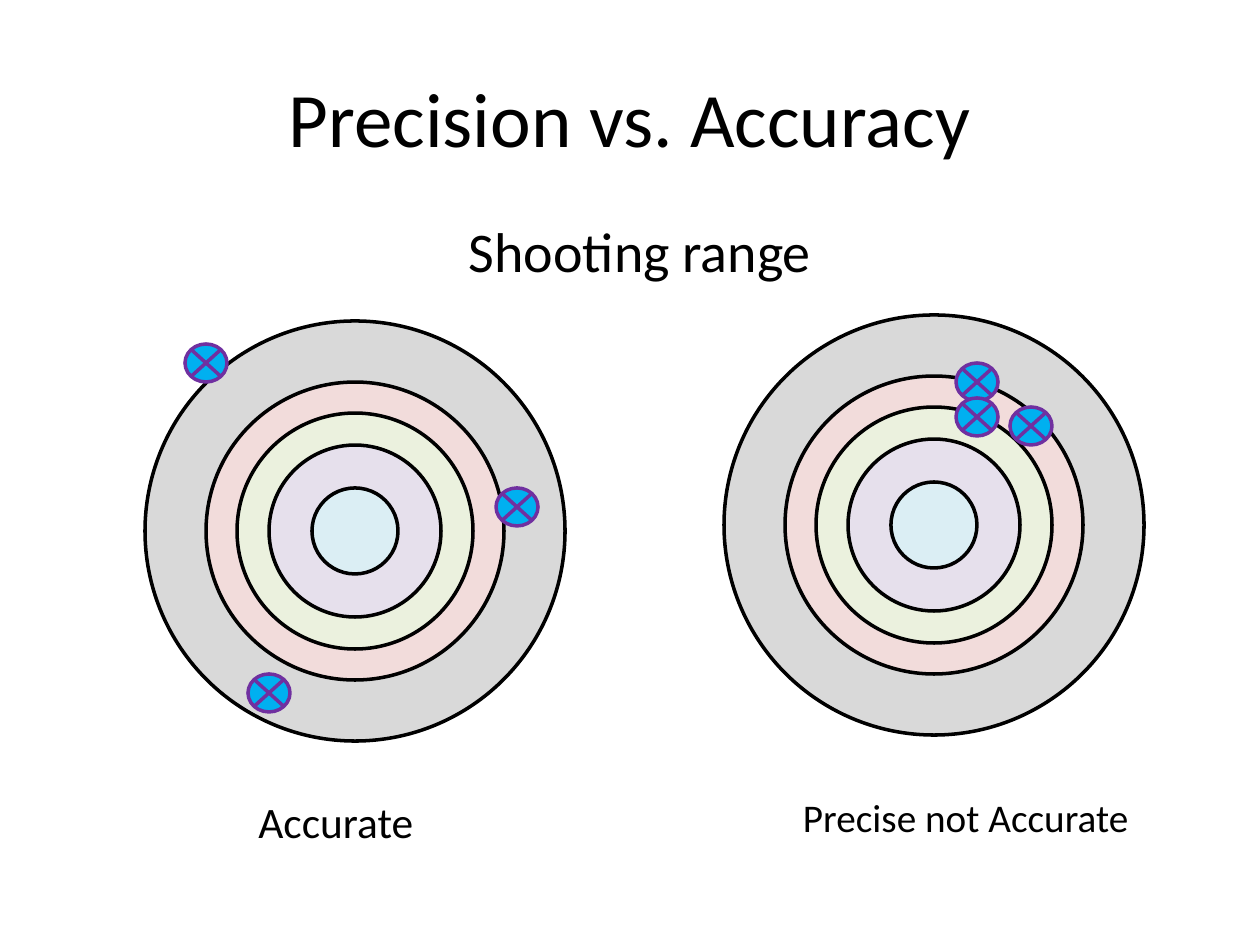
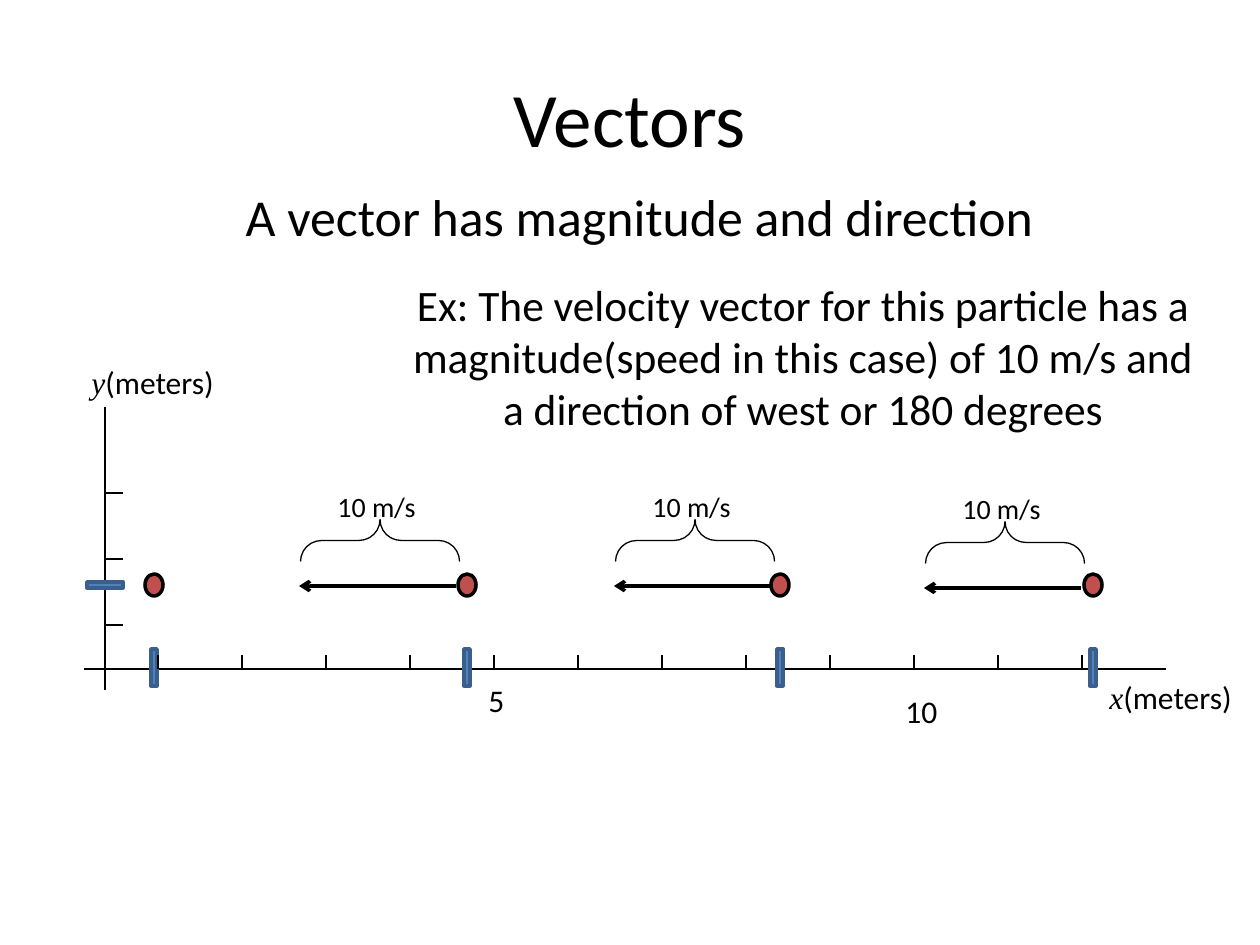
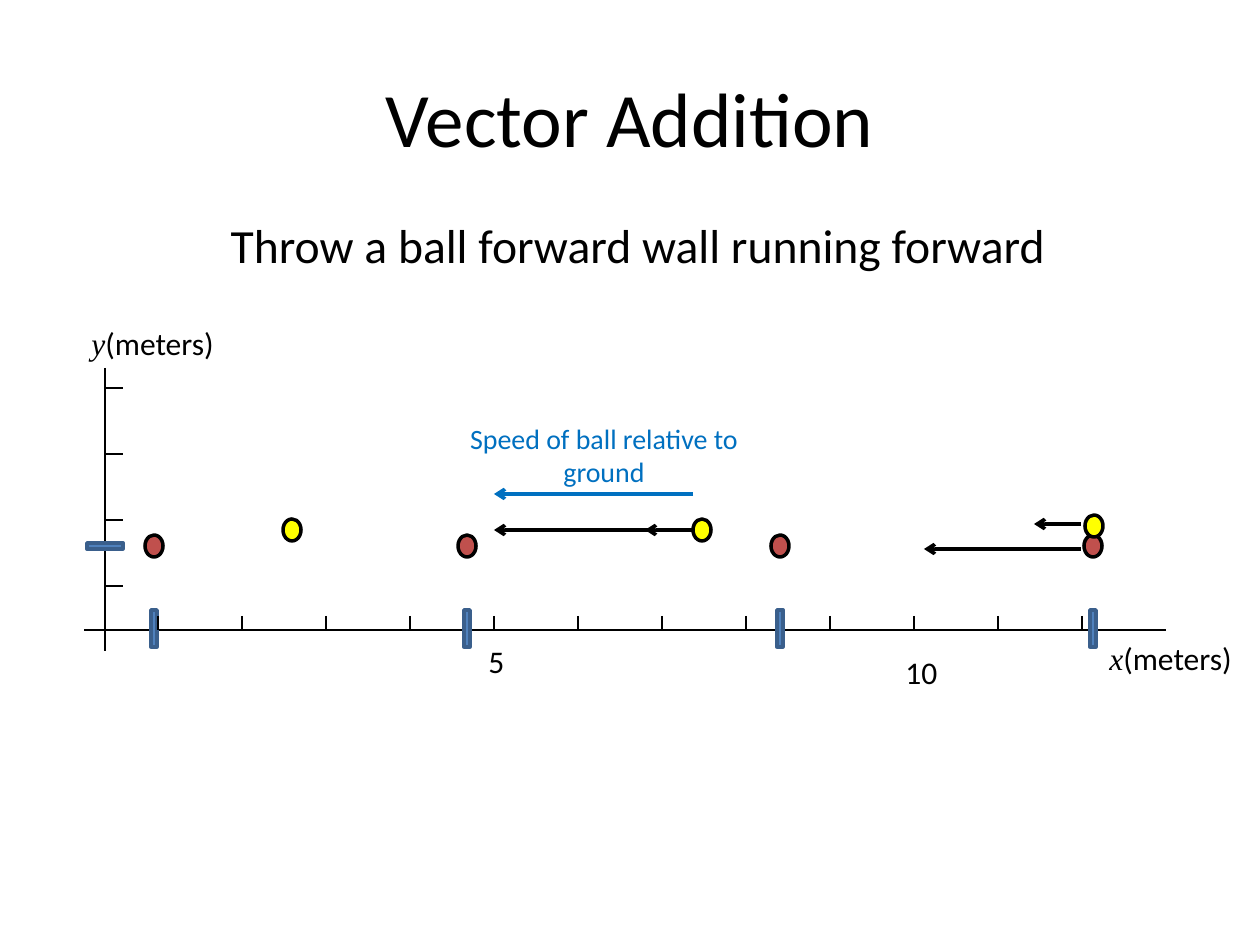
import pptx
import pptx.util
import pptx.dml.color
import pptx.enum.shapes
import pptx.enum.text
import pptx.oxml.ns
import lxml.etree

PX = 914400 / 126
MSO = pptx.enum.shapes.MSO_SHAPE
RGB = pptx.dml.color.RGBColor.from_string
QN = pptx.oxml.ns.qn
BODY = "Calibri"
MATH = "Times New Roman"
COLORS = {
    "black": "000000", "outer": "D9D9D9", "rose": "F2DCDB", "green": "EBF1DE",
    "lilac": "E6E0EC", "bullseye": "DBEEF4", "shot": "00B0F0", "shot_line": "7030A0",
    "particle": "C0504D", "bar": "4F81BD", "bar_line": "3A5F8C", "ball": "FFFF00",
    "ground": "0070C0",
}


def add_shape(s, kind, x, y, w, h, fill=None, line="black", width=2):
    sp = s.shapes.add_shape(kind, *(int(v * PX) for v in (x, y, w, h)))
    sp.shadow.inherit = False
    if fill:
        sp.fill.solid()
        sp.fill.fore_color.rgb = RGB(COLORS[fill])
    else:
        sp.fill.background()
    sp.line.color.rgb = RGB(COLORS[line])
    sp.line.width = pptx.util.Pt(width)
    return sp


def add_line(s, x1, y1, x2, y2, color="black", width=0.75, arrow=False):
    cn = s.shapes.add_connector(pptx.enum.shapes.MSO_CONNECTOR.STRAIGHT,
                                *(int(v * PX) for v in (x1, y1, x2, y2)))
    cn.line.color.rgb = RGB(COLORS[color])
    cn.line.width = pptx.util.Pt(width)
    if arrow:
        lxml.etree.SubElement(cn.line._get_or_add_ln(), QN("a:tailEnd"), type="arrow")
    lxml.etree.SubElement(cn._element.spPr, QN("a:effectLst"))


prs = pptx.Presentation()
prs.slide_width = int(1260 * PX)
prs.slide_height = int(945 * PX)
precision, vectors, addition = [prs.slides.add_slide(prs.slide_layouts[6]) for _ in range(3)]

texts = []
for s, title in ((precision, "Precision vs. Accuracy"), (vectors, "Vectors"),
                 (addition, "Vector Addition")):
    texts.append((s, 63, 38, 1134, 157, [(title, BODY)], 44, "black", "title"))
for s, x, y, w, h, body, size, color in (
    (precision, 220, 210, 840, 95, "Shooting range", 32, "black"),
    (precision, 147, 789, 378, 54, "Accurate", 24.8, "black"),
    (precision, 777, 787, 378, 54, "Precise not Accurate", 22.4, "black"),
    (vectors, 220, 179, 840, 95, "A vector has magnitude and direction", 29.6, "black"),
    (vectors, 399, 272, 809, 194,
     "Ex: The velocity vector for this particle has a magnitude(speed in this case) "
     "of 10 m/s and a direction of west or 180 degrees", 24.8, "black"),
    (addition, 218, 210, 840, 95, "Throw a ball forward wall running forward", 27.2, "black"),
    (addition, 436, 415, 336, 95, "Speed of ball relative to ground", 16, "ground"),
):
    texts.append((s, x, y, w, h, [(body, BODY)], size, color, "body"))

rings = ((420, "outer"), (298, "rose"), (236, "green"), (172, "lilac"), (86, "bullseye"))
for cx, cy in ((355, 531), (934, 525)):
    for d, fill in rings:
        add_shape(precision, MSO.OVAL, cx - d // 2, cy - d // 2, d, d, fill)
for x, y in ((185, 344), (496, 488), (248, 674), (956, 363), (1010, 407), (956, 398)):
    add_shape(precision, MSO.FLOWCHART_SUMMING_JUNCTION, x, y, 42, 38, "shot", "shot_line")

for s, axis_y, y_ticks in ((vectors, 669, 3), (addition, 630, 4)):
    for i in range(4):
        add_shape(s, MSO.OVAL, 145 + 313 * i, axis_y - 95, 18, 22, "particle")
    add_line(s, 105, axis_y - 262, 105, axis_y + 21)
    add_line(s, 1166, axis_y, 84, axis_y)
    add_shape(s, MSO.RECTANGLE, 87, axis_y - 87, 36, 6, "bar", "bar_line")
    for i in range(4):
        add_shape(s, MSO.RECTANGLE, 151 + 313 * i, axis_y - 20, 6, 37, "bar", "bar_line")
    for i in range(y_ticks):
        y = axis_y - 44 - 66 * i
        add_line(s, 123, y, 105, y)
    for i in range(12):
        x = 158 + 84 * i
        add_line(s, x, axis_y - 14, x, axis_y)
    for x, dy, w, runs in (
        (1097, 3, 149, [("x", MATH), ("(meters)", BODY)]),
        (79, -312, 150, [("y", MATH), ("(meters)", BODY)]),
        (476, 6, 42, [("5", BODY)]),
        (893, 17, 58, [("10", BODY)]),
    ):
        texts.append((s, x, axis_y + dy, w, 50, runs, 18, "black", "label"))

for tip, y in ((924, 588), (614, 586), (299, 586)):
    add_line(vectors, tip + 157, y, tip, y, width=2, arrow=True)
    brace = add_shape(vectors, MSO.LEFT_BRACE, tip + 60, y - 125, 42, 159, width=0.75)
    brace.rotation = 90
    brace.adjustments[0] = 0.5
    brace.adjustments[1] = 0.5
    texts.append((vectors, tip + 26, y - 103, 105, 47, [("10 m/s", BODY)], 16, "black", "label"))

for x, y in ((1085, 515), (693, 519), (283, 519)):
    add_shape(addition, MSO.OVAL, x, y, 18, 22, "ball")
for start, tip, y, color in ((1081, 924, 549, "black"), (1081, 1034, 524, "black"),
                             (693, 645, 530, "black"), (651, 494, 530, "black"),
                             (693, 494, 494, "ground")):
    add_line(addition, start, y, tip, y, color, 2, True)

for s, x, y, w, h, runs, size, color, role in texts:
    tf = s.shapes.add_textbox(*(int(v * PX) for v in (x, y, w, h))).text_frame
    tf.word_wrap = role != "label"
    p = tf.paragraphs[0]
    if role == "label":
        tf.auto_size = pptx.enum.text.MSO_AUTO_SIZE.SHAPE_TO_FIT_TEXT
    else:
        p.alignment = pptx.enum.text.PP_ALIGN.CENTER
    if role == "title":
        tf.vertical_anchor = pptx.enum.text.MSO_ANCHOR.MIDDLE
    for words, font in runs:
        r = p.add_run()
        r.text = words
        r.font.name = font
        r.font.size = pptx.util.Pt(size)
        r.font.italic = font == MATH
        r.font.color.rgb = RGB(COLORS[color])

prs.save("out.pptx")
